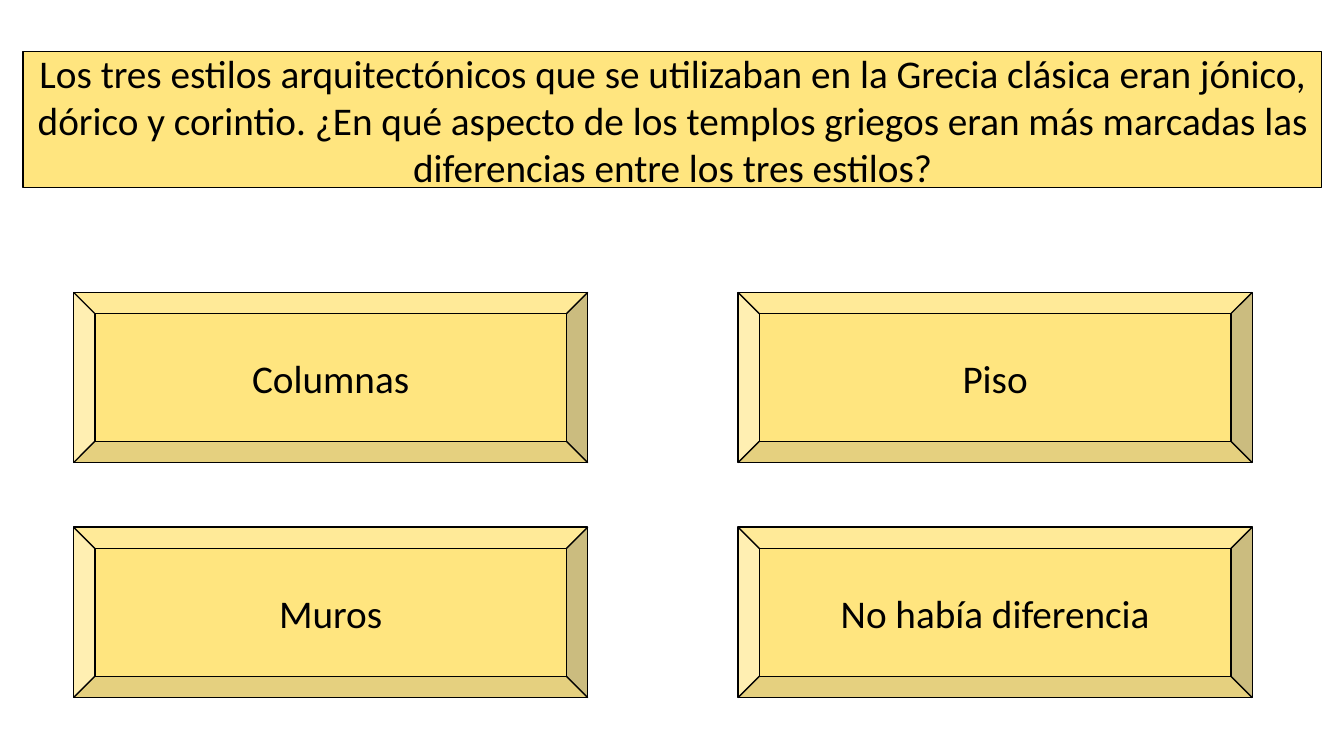
from lxml.etree import SubElement
from pptx import Presentation
from pptx.dml.color import RGBColor
from pptx.enum.shapes import MSO_SHAPE as Shape
from pptx.enum.text import MSO_ANCHOR as Anchor, PP_ALIGN as Align
from pptx.oxml.ns import qn
from pptx.util import Inches, Pt

COLORS = {"gold": "FFCC00", "ink": "000000"}
QUESTION = (
    "Los tres estilos arquitectónicos que se utilizaban en la Grecia clásica "
    "eran jónico, dórico y corintio. ¿En qué aspecto de los templos griegos "
    "eran más marcadas las diferencias entre los tres estilos?"
)
ANSWERS = [["Columnas", "Piso"], ["Muros", "No había diferencia"]]


def color(name):
    return RGBColor.from_string(COLORS[name])


def write_text(shape, text, *, font="Calibri", size=28, ink="ink", align=Align.CENTER):
    frame = shape.text_frame
    frame.word_wrap = True
    frame.vertical_anchor = Anchor.MIDDLE
    paragraph = frame.paragraphs[0]
    paragraph.alignment = align
    run = paragraph.add_run()
    run.text = text
    run.font.name = font
    run.font.size = Pt(size)
    run.font.color.rgb = color(ink)


class QuizSlide:
    """Draws the question and a grid of answer buttons on one slide."""

    left, top = 0.73, 2.9
    column_step, row_step = 6.59, 2.33
    button_width, button_height = 5.1, 1.69
    opacity = 50

    def __init__(self, presentation):
        self.slide = presentation.slides.add_slide(presentation.slide_layouts[6])

    def panel(self, kind, text, *box):
        shape = self.slide.shapes.add_shape(kind, *map(Inches, box))
        shape.shadow.inherit = False
        shape.fill.solid()
        shape.fill.fore_color.rgb = color("gold")
        fill_color = shape.fill._xPr.find(qn("a:solidFill"))[0]
        SubElement(fill_color, qn("a:alpha"), val=str(self.opacity * 1000))
        shape.line.color.rgb = color("ink")
        shape.line.width = Pt(1)
        write_text(shape, text)

    def question(self, text):
        self.panel(Shape.RECTANGLE, text, 0.23, 0.51, 12.88, 1.35)

    def answer(self, text, column, row):
        self.panel(
            Shape.BEVEL,
            text,
            self.left + column * self.column_step,
            self.top + row * self.row_step,
            self.button_width,
            self.button_height,
        )


def main():
    presentation = Presentation()
    presentation.slide_width = Inches(13.33)
    presentation.slide_height = Inches(7.5)
    quiz = QuizSlide(presentation)
    quiz.question(QUESTION)
    for row, answers in enumerate(ANSWERS):
        for column, text in enumerate(answers):
            quiz.answer(text, column, row)
    presentation.save("out.pptx")


if __name__ == "__main__":
    main()
